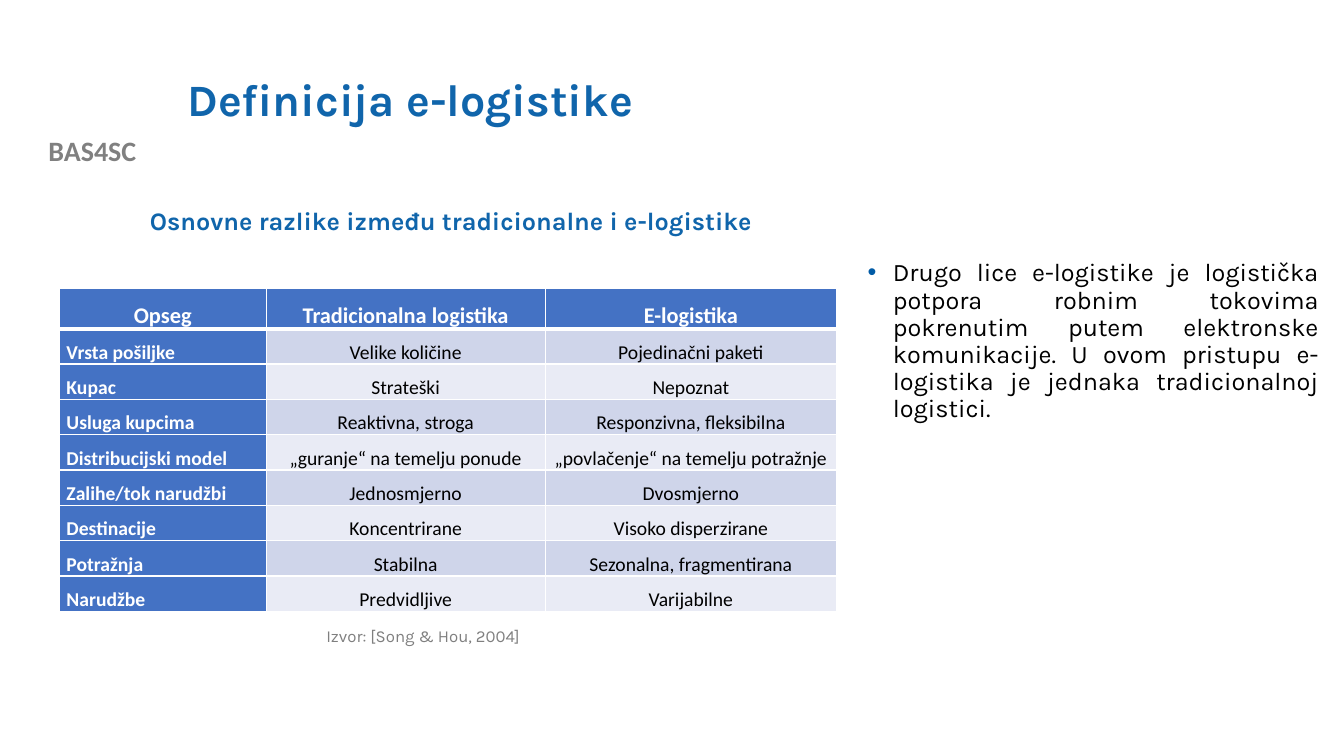
from dataclasses import dataclass

from lxml import etree
from pptx import Presentation
from pptx.dml.color import RGBColor
from pptx.enum.text import MSO_ANCHOR, MSO_AUTO_SIZE, PP_ALIGN
from pptx.oxml.ns import qn
from pptx.util import Pt

LEFT, MID, JUST = PP_ALIGN.LEFT, PP_ALIGN.CENTER, PP_ALIGN.JUSTIFY
TOP, CENTER = MSO_ANCHOR.TOP, MSO_ANCHOR.MIDDLE
GROW, FIXED = MSO_AUTO_SIZE.SHAPE_TO_FIT_TEXT, MSO_AUTO_SIZE.NONE


@dataclass(frozen=True)
class Theme:
    head_font: str = "Karla"
    grid_font: str = "Calibri"
    blue: str = "1065AB"
    dot: str = "015BA6"
    gray: str = "808080"
    pale: str = "7F7F7F"
    black: str = "000000"
    white: str = "FFFFFF"
    fill: str = "4472C4"
    bands: tuple = ("CFD5EA", "E9EBF5")
    title: int = 32
    label: int = 20
    body: int = 18
    header: int = 16
    cell: int = 14
    note: int = 12


class Deck:
    def __init__(self, theme):
        self.theme = theme
        self.file = Presentation()
        self.file.slide_width = Pt(960)
        self.file.slide_height = Pt(540)
        self.slide = self.file.slides.add_slide(self.file.slide_layouts[6])

    def add_run(self, para, text, size, color, font, bold=False):
        run = para.add_run()
        run.text = text
        run.font.name = font
        run.font.size = Pt(size)
        run.font.bold = bold
        run.font.color.rgb = RGBColor.from_string(color)

    def text(self, box, text, size, color, font=None, bold=False,
             align=LEFT, anchor=TOP, line=1.0, fit=FIXED, dot=False):
        frame = self.slide.shapes.add_textbox(*map(Pt, box)).text_frame
        frame.word_wrap = True
        frame.auto_size = fit
        frame.vertical_anchor = anchor
        para = frame.paragraphs[0]
        para.alignment = align
        para.line_spacing = line
        if dot:
            self.bullet(para)
        self.add_run(para, text, size, color, font or self.theme.head_font, bold)

    def bullet(self, para):
        props = para._p.get_or_add_pPr()
        props.set("marL", str(Pt(18)))
        props.set("indent", str(Pt(-18)))
        color = etree.SubElement(props, qn("a:buClr"))
        etree.SubElement(color, qn("a:srgbClr"), val=self.theme.dot)
        etree.SubElement(props, qn("a:buFont"), typeface="Arial")
        etree.SubElement(props, qn("a:buChar"), char="•")

    def border(self, cell, top, bottom):
        props = cell._tc.get_or_add_tcPr()
        for side, width in (("L", 1), ("R", 1), ("T", top), ("B", bottom)):
            line = etree.SubElement(props, qn(f"a:ln{side}"), w=str(Pt(width)))
            fill = etree.SubElement(line, qn("a:solidFill"))
            etree.SubElement(fill, qn("a:srgbClr"), val=self.theme.white)

    def table(self, left, top, widths, heights, rows):
        frame = self.slide.shapes.add_table(
            len(rows), len(widths), Pt(left), Pt(top), Pt(sum(widths)), Pt(sum(heights)))
        grid = frame.table
        for col, width in zip(grid.columns, widths):
            col.width = Pt(width)
        for i, (row, height, words) in enumerate(zip(grid.rows, heights, rows)):
            row.height = Pt(height)
            for j, (cell, word) in enumerate(zip(row.cells, words)):
                self.cell(cell, word, i, j)

    def cell(self, cell, word, row, col):
        theme = self.theme
        head = row == 0 or col == 0
        self.border(cell, 3 if row == 1 else 1, 3 if row == 0 else 1)
        cell.fill.solid()
        shade = theme.fill if head else theme.bands[(row - 1) % 2]
        cell.fill.fore_color.rgb = RGBColor.from_string(shade)
        cell.margin_left = cell.margin_right = Pt(5)
        cell.margin_top = cell.margin_bottom = 0
        cell.vertical_anchor = CENTER if row == 0 else TOP
        para = cell.text_frame.paragraphs[0]
        para.alignment = JUST if row and col == 0 else MID
        para.line_spacing = 1.5
        para.space_after = Pt(6)
        self.add_run(para, word, theme.cell if row else theme.header,
                     theme.white if head else theme.black, theme.grid_font, head)


ROWS = (
    ("Opseg", "Tradicionalna logistika", "E-logistika"),
    ("Vrsta pošiljke", "Velike količine", "Pojedinačni paketi"),
    ("Kupac", "Strateški", "Nepoznat"),
    ("Usluga kupcima", "Reaktivna, stroga", "Responzivna, fleksibilna"),
    ("Distribucijski model", "„guranje“ na temelju ponude",
     "„povlačenje“ na temelju potražnje"),
    ("Zalihe/tok narudžbi", "Jednosmjerno", "Dvosmjerno"),
    ("Destinacije", "Koncentrirane", "Visoko disperzirane"),
    ("Potražnja", "Stabilna", "Sezonalna, fragmentirana"),
    ("Narudžbe", "Predvidljive", "Varijabilne"),
)
CLAIM = (
    "Drugo lice e-logistike je logistička potpora robnim tokovima pokrenutim "
    "putem elektronske komunikacije. U ovom pristupu e-logistika je jednaka "
    "tradicionalnoj logistici."
)


def main():
    theme = Theme()
    deck = Deck(theme)
    deck.text((0, 92, 132, 32), "BAS4SC", theme.label, theme.gray,
              font=theme.grid_font, bold=True, align=MID, fit=GROW)
    deck.text((126.7, 29, 767.5, 88), "Definicija e-logistike", theme.title,
              theme.blue, bold=True, anchor=CENTER, line=0.9)
    deck.text((226, 445, 263.5, 37.5), "Izvor: [Song & Hou, 2004]", theme.note,
              theme.pale, line=0.9)
    deck.text((100, 143.3, 558, 29), "Osnovne razlike između tradicionalne i e-logistike",
              theme.body, theme.blue, bold=True, fit=GROW)
    deck.text((612.7, 182.2, 336.3, 105), CLAIM, theme.body, theme.black,
              align=JUST, line=0.9, fit=GROW, dot=True)
    deck.table(42.5, 206, (147.6, 199.4, 208.1),
               [28.8] + [25.2] * (len(ROWS) - 1), ROWS)
    deck.file.save("out.pptx")


if __name__ == "__main__":
    main()
